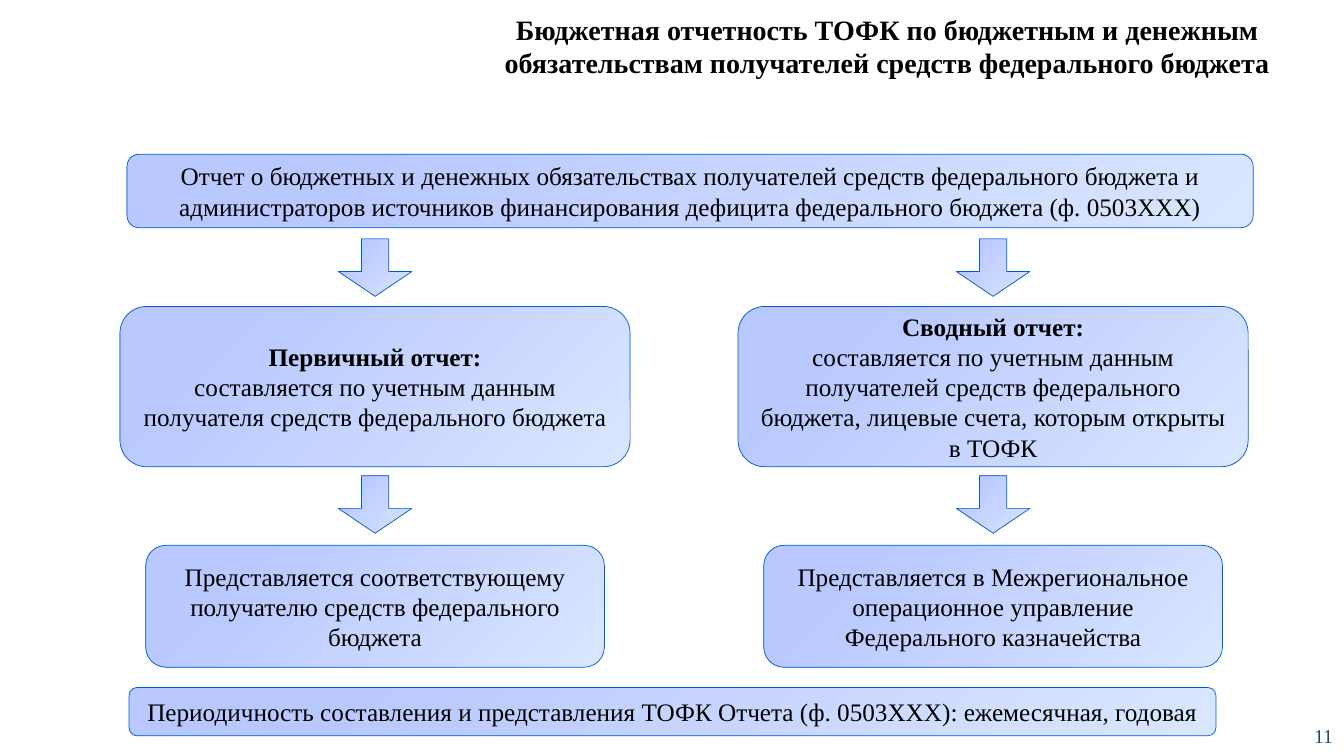
"""Build the slide on treasury reports about budget and cash obligations."""
from dataclasses import dataclass

from lxml.etree import SubElement
from pptx import Presentation
from pptx.dml.color import RGBColor
from pptx.enum.shapes import MSO_SHAPE as Kind
from pptx.enum.text import MSO_ANCHOR as Anchor
from pptx.enum.text import MSO_AUTO_SIZE as Fit
from pptx.enum.text import PP_ALIGN as Align
from pptx.oxml.ns import qn
from pptx.shapes.autoshape import Shape
from pptx.slide import Slide
from pptx.text.text import TextFrame
from pptx.util import Inches, Pt

FONT = "Times New Roman"
BLACK = RGBColor(0x00, 0x00, 0x00)
NAVY = RGBColor(0x1F, 0x49, 0x7D)
EDGE = RGBColor(0x00, 0x5B, 0xD3)
DEEP = RGBColor(0xB9, 0xC8, 0xFF)
PALE = RGBColor(0xD9, 0xE6, 0xFF)


@dataclass(frozen=True)
class Box:
    left: float
    top: float
    width: float
    height: float
    text: str
    head: str = ""


@dataclass(frozen=True)
class Branch:
    mid: float
    head: str
    basis: str
    target: str


SUMMARY = Box(
    1.26, 1.53, 11.17, 0.73,
    "Отчет о бюджетных и денежных обязательствах получателей средств "
    "федерального бюджета и администраторов источников финансирования "
    "дефицита федерального бюджета (ф. 0503ХХХ)",
)
PERIOD = Box(
    1.28, 6.82, 10.78, 0.48,
    "Периодичность составления и представления ТОФК Отчета "
    "(ф. 0503ХХХ): ежемесячная, годовая",
)
BRANCHES = (
    Branch(
        3.72,
        "Первичный отчет:",
        "составляется по учетным данным получателя средств "
        "федерального бюджета",
        "Представляется соответствующему получателю средств "
        "федерального бюджета",
    ),
    Branch(
        9.85,
        "Сводный отчет:",
        "составляется по учетным данным получателей средств федерального "
        "бюджета, лицевые счета, которым открыты в ТОФК",
        "Представляется в Межрегиональное операционное управление "
        "Федерального казначейства",
    ),
)
TITLE = (
    "Бюджетная отчетность ТОФК по бюджетным и денежным обязательствам "
    "получателей средств федерального бюджета"
)
ARROW_TOPS = (2.29, 4.64)


def write(frame: TextFrame, text: str, size: int, color: RGBColor = BLACK,
          bold: bool = False, align: Align = Align.CENTER,
          more: bool = False) -> None:
    para = frame.add_paragraph() if more else frame.paragraphs[0]
    para.alignment = align
    run = para.add_run()
    run.text = text
    font = run.font
    font.name, font.size, font.bold = FONT, Pt(size), bold
    font.color.rgb = color


def add_form(slide: Slide, kind: Kind, left: float, top: float,
             width: float, height: float) -> Shape:
    form = slide.shapes.add_shape(
        kind, Inches(left), Inches(top), Inches(width), Inches(height))
    form.shadow.inherit = False
    form.line.color.rgb = EDGE
    form.line.width = Pt(0.5)
    form.fill.gradient()
    stops = form.fill.gradient_stops
    for stop, place, color in zip(stops, (0.18, 1), (DEEP, PALE)):
        stop.position = place
        stop.color.rgb = color
    grad = form._element.spPr.find(qn("a:gradFill"))
    grad.remove(grad.find(qn("a:lin")))
    trail = SubElement(grad, qn("a:path"), {"path": "circle"})
    SubElement(trail, qn("a:fillToRect"), {"r": "100000", "b": "100000"})
    return form


def add_box(slide: Slide, box: Box) -> None:
    form = add_form(slide, Kind.ROUNDED_RECTANGLE,
                    box.left, box.top, box.width, box.height)
    frame = form.text_frame
    frame.word_wrap = True
    frame.vertical_anchor = Anchor.MIDDLE
    if box.head:
        write(frame, box.head, 18, bold=True)
    write(frame, box.text, 18, more=bool(box.head))


def add_arrow(slide: Slide, mid: float, top: float) -> None:
    width, height = 0.57, 0.73
    arrow = add_form(slide, Kind.RIGHT_ARROW, mid - width / 2, top,
                     width, height)
    arrow.rotation = 90
    arrow.adjustments[0] = 0.372
    arrow.adjustments[1] = 0.432


def add_branch(slide: Slide, branch: Branch) -> None:
    mid = branch.mid
    wide, slim = 5.06, 4.55
    add_box(slide, Box(mid - slim / 2, 5.41, slim, 1.21, branch.target))
    add_box(slide, Box(mid - wide / 2, 3.04, wide, 1.59,
                       branch.basis, branch.head))
    for top in ARROW_TOPS:
        add_arrow(slide, mid, top)


def add_title(slide: Slide) -> None:
    title = slide.shapes.title
    title.left, title.top = Inches(4.28), Inches(0.07)
    title.width, title.height = Inches(9.04), Inches(0.77)
    frame = title.text_frame
    frame.word_wrap = True
    frame.auto_size = Fit.SHAPE_TO_FIT_TEXT
    frame.vertical_anchor = Anchor.TOP
    write(frame, TITLE, 20, bold=True)


def add_number(slide: Slide) -> None:
    label = slide.shapes.add_textbox(
        Inches(12.86), Inches(7.14), Inches(0.46), Inches(0.32))
    frame = label.text_frame
    frame.word_wrap = False
    frame.vertical_anchor = Anchor.MIDDLE
    write(frame, "11", 14, NAVY, align=Align.RIGHT)


def main() -> None:
    deck = Presentation()
    deck.slide_width, deck.slide_height = Inches(13.33), Inches(7.5)
    slide = deck.slides.add_slide(deck.slide_layouts[5])
    add_title(slide)
    add_number(slide)
    add_box(slide, SUMMARY)
    for branch in BRANCHES:
        add_branch(slide, branch)
    add_box(slide, PERIOD)
    deck.save("out.pptx")


if __name__ == "__main__":
    main()
